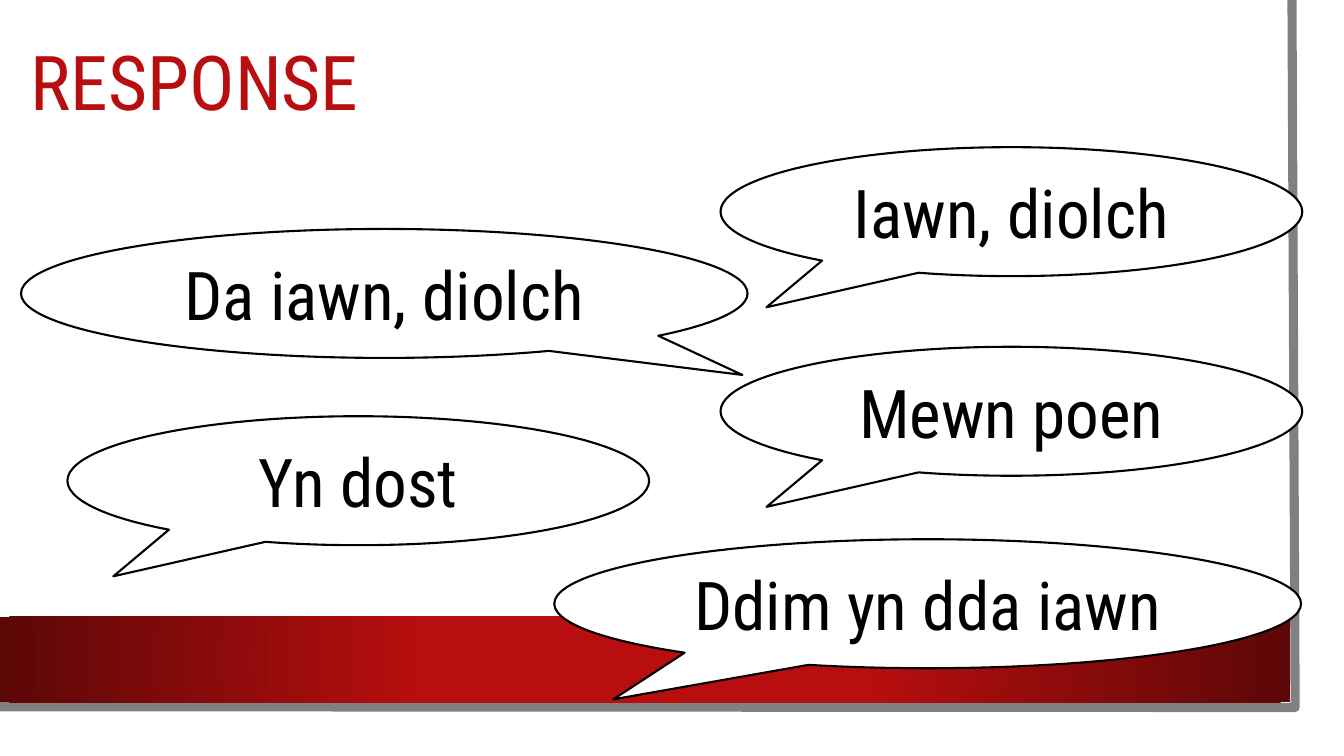
from dataclasses import dataclass

from lxml import etree
from pptx import Presentation
from pptx import util as u
from pptx.dml.color import RGBColor
from pptx.enum import shapes, text
from pptx.oxml import ns


@dataclass(frozen=True)
class Theme:
    font: str = "Roboto Condensed"
    red: str = "B80E0F"
    dark_red: str = "5C0707"
    grey: str = "808080"
    black: str = "000000"
    white: str = "FFFFFF"
    title_size: float = 54
    speech_size: float = 48
    frame_width: float = 6.5
    outline_width: float = 1.5


@dataclass(frozen=True)
class Bubble:
    words: str
    left: float
    top: float
    width: float = 14.66
    height: float = 3.25
    tail: tuple[float, float] = (-0.421, 0.741)


THEME = Theme()
BUBBLES = [
    Bubble("Iawn, diolch", 18.16, 3.71),
    Bubble("Da iawn, diolch", 0.53, 5.77, width=18.31, tail=(0.493, 0.632)),
    Bubble("Ddim yn dda iawn", 13.97, 13.59, width=18.82),
    Bubble("Mewn poen", 18.16, 8.74),
    Bubble("Yn dost", 1.7, 10.49),
]


def rgb(value: str) -> RGBColor:
    """Turn a hex value into a colour."""
    return RGBColor.from_string(value)


def apply(target, formats: dict) -> None:
    """Set every named attribute on the target."""
    for name, value in formats.items():
        setattr(target, name, value)


def write(box, words: str, size: float, colour: str, paragraph_formats: dict) -> None:
    """Put one middle-anchored line of text in a box."""
    frame = box.text_frame
    apply(frame, {"word_wrap": True, "vertical_anchor": text.MSO_ANCHOR.MIDDLE})
    para = frame.paragraphs[0]
    apply(para, paragraph_formats)
    span = para.add_run()
    span.text = words
    apply(span.font, {"name": THEME.font, "size": u.Pt(size)})
    span.font.color.rgb = rgb(colour)


def outline(shape, colour: str, width: float) -> None:
    """Give a shape a plain line and no shadow."""
    shape.shadow.inherit = False
    shape.line.color.rgb = rgb(colour)
    shape.line.width = u.Pt(width)


def draw_frame(page) -> None:
    """Draw the grey edge along the right and bottom."""
    builder = page.shapes.build_freeform(u.Cm(32.56), 0)
    corners = [(32.64, 17.83), (-0.08, 17.81)]
    builder.add_line_segments([(u.Cm(x), u.Cm(y)) for x, y in corners], close=False)
    edge = builder.convert_to_shape()
    edge.fill.background()
    outline(edge, THEME.grey, THEME.frame_width)


def draw_band(page) -> None:
    """Draw the red band with its radial gradient."""
    band = page.shapes.add_shape(
        shapes.MSO_SHAPE.RECTANGLE, 0, u.Cm(15.54), u.Cm(32.51), u.Cm(2.16)
    )
    band.shadow.inherit = False
    band.line.fill.background()
    band.fill.gradient()
    stops = [(0.34, THEME.red), (1, THEME.dark_red)]
    for stop, (position, colour) in zip(band.fill.gradient_stops, stops):
        stop.position = position
        stop.color.rgb = rgb(colour)
    gradient = band.element.spPr.find(ns.qn("a:gradFill"))
    gradient.remove(gradient.find(ns.qn("a:lin")))
    radial = etree.SubElement(gradient, ns.qn("a:path"), {"path": "circle"})
    centre = {side: "50000" for side in "ltrb"}
    etree.SubElement(radial, ns.qn("a:fillToRect"), centre)


def draw_title(page) -> None:
    """Write the slide heading."""
    box = page.shapes.add_textbox(u.Cm(0.53), u.Cm(0.56), u.Cm(28.88), u.Cm(3.2))
    write(box, "RESPONSE", THEME.title_size, THEME.red, {"line_spacing": 0.9})


def draw_bubble(page, bubble: Bubble) -> None:
    """Draw one speech bubble with its words."""
    lengths = (bubble.left, bubble.top, bubble.width, bubble.height)
    callout = page.shapes.add_shape(
        shapes.MSO_SHAPE.OVAL_CALLOUT, *(u.Cm(length) for length in lengths)
    )
    for index, value in enumerate(bubble.tail):
        callout.adjustments[index] = value
    callout.fill.solid()
    callout.fill.fore_color.rgb = rgb(THEME.white)
    outline(callout, THEME.black, THEME.outline_width)
    centred = {"alignment": text.PP_ALIGN.CENTER}
    write(callout, bubble.words, THEME.speech_size, THEME.black, centred)


def main() -> None:
    """Build and save the deck."""
    deck = Presentation()
    apply(deck, {"slide_width": u.Cm(33.87), "slide_height": u.Cm(19.05)})
    page = deck.slides.add_slide(deck.slide_layouts[6])
    draw_frame(page)
    draw_band(page)
    draw_title(page)
    for bubble in BUBBLES:
        draw_bubble(page, bubble)
    deck.save("out.pptx")


if __name__ == "__main__":
    main()
